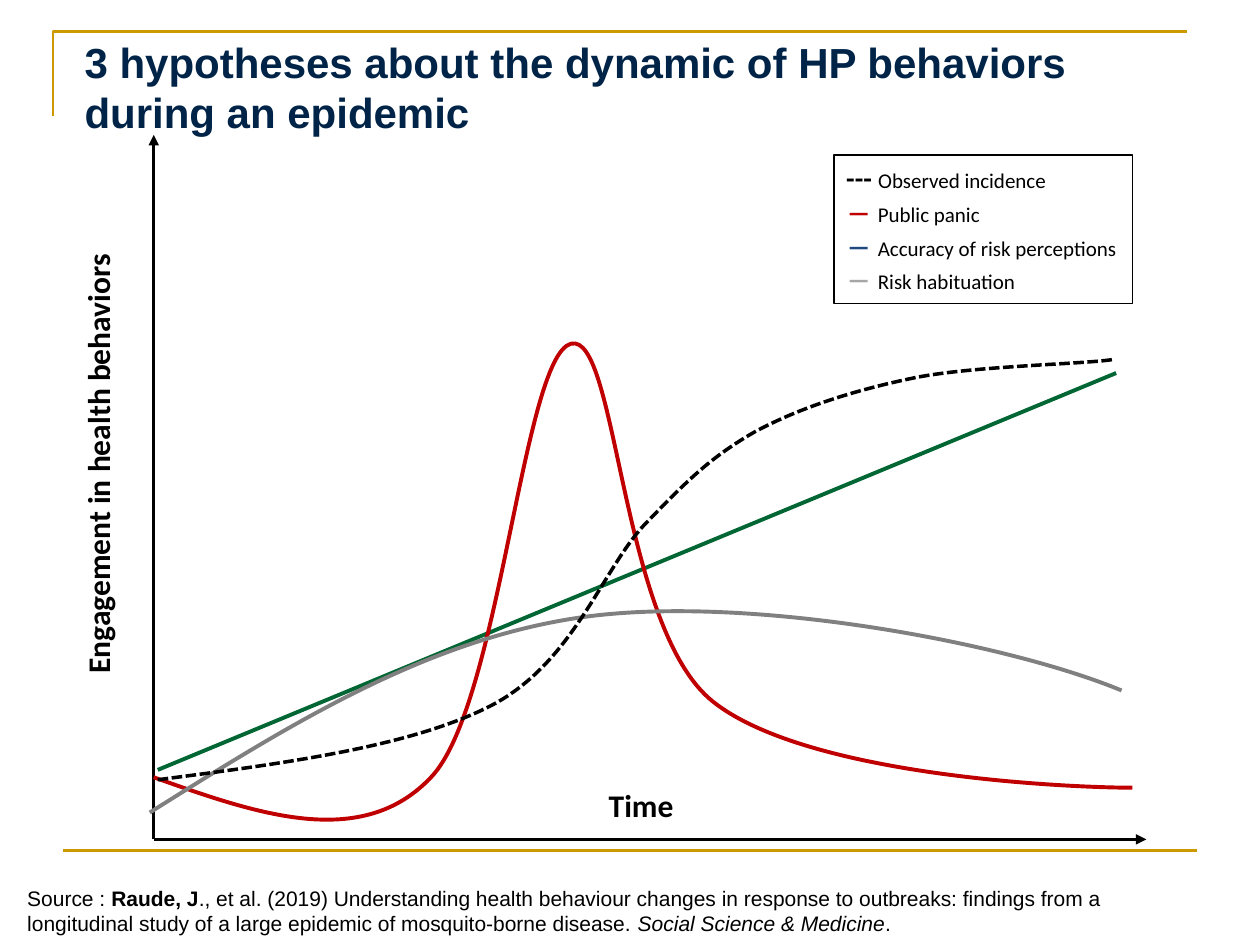
from lxml.etree import SubElement
from pptx import Presentation
from pptx.dml.color import RGBColor
from pptx.enum.dml import MSO_LINE
from pptx.enum.shapes import MSO_CONNECTOR, MSO_SHAPE
from pptx.enum.text import MSO_ANCHOR, MSO_AUTO_SIZE, PP_ALIGN
from pptx.oxml.ns import qn
from pptx.util import Cm, Pt

GOLD, BLACK, RED, GREEN, GRAY = "CC9900", "000000", "C00000", "006633", "808080"
ORIGIN = (3.1, 16.92)
CURVE_STEPS = 30

# Each curve: a start point, then (control, control, end) per segment, in cm
PANIC = [(3.1, 15.67),
         ((5.18, 16.41), (7.29, 17.15), (8.69, 15.67)),
         ((10.08, 14.22), (10.54, 7.19), (11.51, 6.93)),
         ((12.45, 6.68), (12.5, 12.67), (14.38, 14.15)),
         ((16.28, 15.65), (21.54, 15.88), (22.83, 15.88))]
HABITUATION = [(3.02, 16.38),
               ((5.84, 14.61), (8.66, 12.83), (11.91, 12.42)),
               ((15.19, 12.01), (20.27, 12.95), (22.61, 13.92))]
INCIDENCE = [(3.18, 15.72),
             ((5.72, 15.39), (8.28, 15.06), (9.91, 14.22)),
             ((11.56, 13.36), (12.14, 11.48), (13, 10.57)),
             ((13.89, 9.65), (14.33, 9.22), (15.21, 8.71)),
             ((16.1, 8.23), (17.2, 7.87), (18.42, 7.62)),
             ((19.63, 7.37), (22, 7.34), (22.48, 7.24))]

LEGEND = [("--- ", BLACK, "Observed incidence"),
          ("― ", RED, "Public panic"),
          ("― ", "1F497D", "Accuracy of risk perceptions"),
          ("― ", "A6A6A6", "Risk habituation")]


def rgb(value):
    return RGBColor.from_string(value)


def style_line(line, color, width, dash=None):
    line.color.rgb = rgb(color)
    line.width = Pt(width)
    if dash:
        line.dash_style = dash


def add_run(p, text, size=12, font="Arial", color=BLACK, bold=False, italic=False):
    r = p.add_run()
    r.text = text
    r.font.size, r.font.name = Pt(size), font
    r.font.bold, r.font.italic = bold, italic
    r.font.color.rgb = rgb(color)


def add_line(s, start, end, color, width, arrow=False):
    sp = s.shapes.add_connector(MSO_CONNECTOR.STRAIGHT,
                                *(Cm(v) for v in (*start, *end)))
    style_line(sp.line, color, width)
    if arrow:
        SubElement(sp.line._get_or_add_ln(), qn("a:tailEnd"), type="triangle")
    SubElement(sp._element.spPr, qn("a:effectLst"))


def add_outline(s, points, color, width, dash=None):
    (x, y), *rest = [(Cm(x), Cm(y)) for x, y in points]
    builder = s.shapes.build_freeform(x, y)
    builder.add_line_segments(rest, close=False)
    sp = builder.convert_to_shape()
    sp.fill.background()
    sp.shadow.inherit = False
    style_line(sp.line, color, width, dash)
    return sp


def curve_points(curve):
    """Sample the cubic Bezier segments of a curve."""
    points = [curve[0]]
    for a, b, c in curve[1:]:
        start = points[-1]
        for i in range(1, CURVE_STEPS + 1):
            t = i / CURVE_STEPS
            u = 1 - t
            points.append(tuple(
                u**3 * p0 + 3 * u * u * t * p1 + 3 * u * t * t * p2 + t**3 * p3
                for p0, p1, p2, p3 in zip(start, a, b, c)))
    return points


def add_curve(s, curve, color, width, dash=None):
    """Size the shape by sampled points, then draw it with true Bezier segments."""
    sp = add_outline(s, curve_points(curve), color, width, dash)
    outline = sp._element.find(".//" + qn("a:path"))
    for segment in outline.findall(qn("a:lnTo")):
        outline.remove(segment)
    for segment in curve[1:]:
        bezier = SubElement(outline, qn("a:cubicBezTo"))
        for x, y in segment:
            SubElement(bezier, qn("a:pt"),
                       x=str(Cm(x) - sp.left), y=str(Cm(y) - sp.top))


def add_text_box(s, box):
    sp = s.shapes.add_textbox(*(Cm(v) for v in box))
    sp.text_frame.word_wrap = True
    return sp


def add_axis_label(s, text, box, rotation=0):
    sp = add_text_box(s, box)
    sp.rotation = rotation
    p = sp.text_frame.paragraphs[0]
    p.alignment = PP_ALIGN.CENTER
    add_run(p, text, size=18, font="Calibri", bold=True)


def add_legend(s):
    sp = s.shapes.add_shape(MSO_SHAPE.RECTANGLE, Cm(16.81), Cm(3.12), Cm(6.02), Cm(3))
    sp.shadow.inherit = False
    sp.fill.solid()
    sp.fill.fore_color.rgb = rgb("FFFFFF")
    style_line(sp.line, BLACK, 1)
    tf = sp.text_frame
    tf.word_wrap = False
    tf.vertical_anchor = MSO_ANCHOR.TOP
    for i, (mark, color, label) in enumerate(LEGEND):
        p = tf.add_paragraph() if i else tf.paragraphs[0]
        p.alignment = PP_ALIGN.LEFT
        add_run(p, mark, size=16, font="Calibri", color=color, bold=True)
        add_run(p, label, font="Calibri")


def set_title(s, text):
    sp = s.shapes.title
    sp.left, sp.top, sp.width, sp.height = Cm(1.45), Cm(0.61), Cm(22.4), Cm(2.59)
    tf = sp.text_frame
    tf.auto_size = MSO_AUTO_SIZE.NONE
    tf.vertical_anchor = MSO_ANCHOR.TOP
    p = tf.paragraphs[0]
    p.alignment = PP_ALIGN.LEFT
    add_run(p, text, size=24, color="002448", bold=True)


def add_source(s):
    p = add_text_box(s, (0.3, 17.73, 23.8, 1.27)).text_frame.paragraphs[0]
    add_run(p, "Source : ")
    add_run(p, "Raude, J", bold=True)
    add_run(p, "., et al. (2019) Understanding health behaviour changes in response "
               "to outbreaks: findings from a longitudinal study of a large epidemic "
               "of mosquito-borne disease. ")
    add_run(p, "Social Science & Medicine", italic=True)
    add_run(p, ".")


def main():
    prs = Presentation()
    prs.slide_width, prs.slide_height = Cm(25.4), Cm(19.05)
    s = prs.slides.add_slide(prs.slide_layouts[5])

    # Gold frame
    add_outline(s, [(1.07, 2.34), (1.07, 0.64), (23.93, 0.64)], GOLD, 1.5)
    add_line(s, (1.27, 17.15), (24.13, 17.15), GOLD, 1.5)

    # Axes
    for end in ((23.11, ORIGIN[1]), (ORIGIN[0], 2.72)):
        add_line(s, ORIGIN, end, BLACK, 1.5, arrow=True)

    # Hypotheses, legend and axis labels
    add_line(s, (3.18, 15.52), (22.5, 7.52), GREEN, 2.25)
    add_curve(s, PANIC, RED, 2.25)
    add_curve(s, HABITUATION, GRAY, 2.25)
    add_legend(s)
    add_axis_label(s, "Time", (7.82, 15.72, 10.21, 1.02))
    add_axis_label(s, "Engagement in health behaviors", (-5.13, 8.84, 14.2, 1.02), 270)

    # Observed incidence
    add_curve(s, INCIDENCE, BLACK, 2, MSO_LINE.SQUARE_DOT)

    # Title and source
    set_title(s, "3 hypotheses about the dynamic of HP behaviors during an epidemic")
    add_source(s)
    prs.save("out.pptx")


if __name__ == "__main__":
    main()
